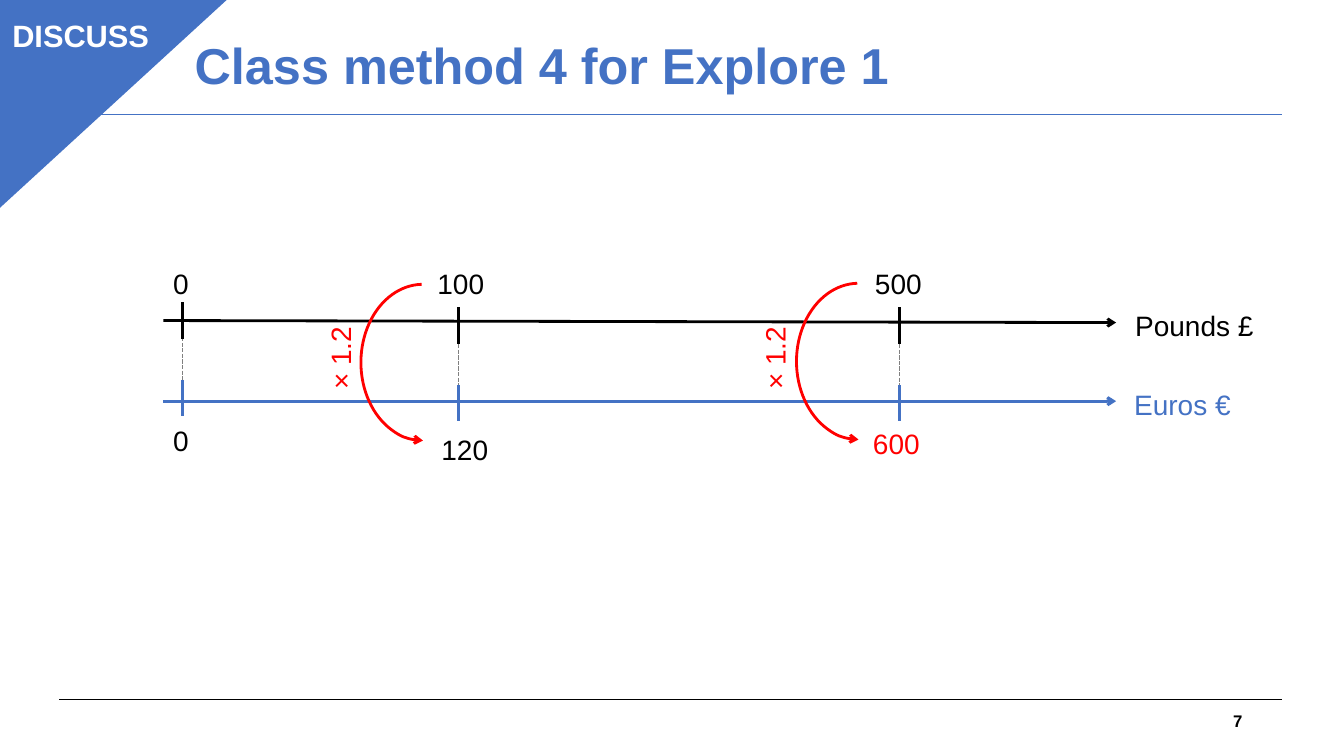
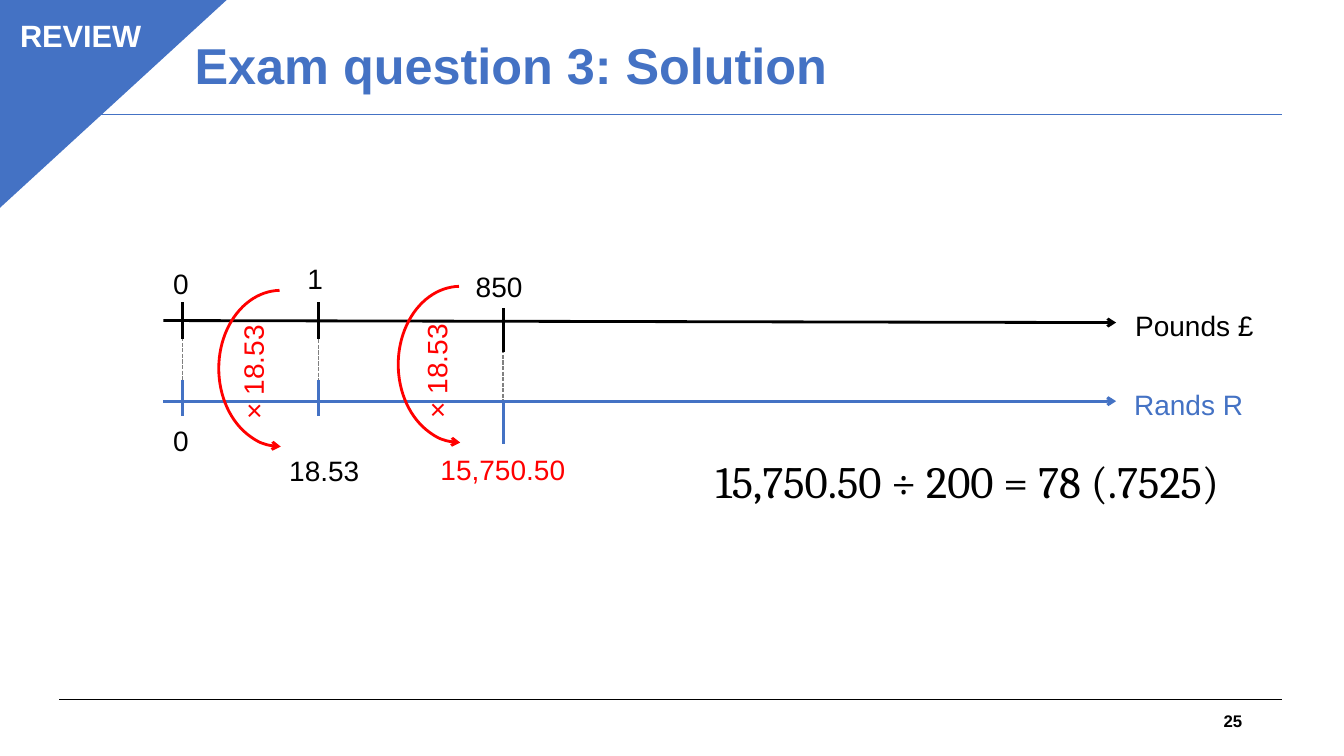
from lxml.etree import SubElement
from pptx import Presentation
from pptx.dml.color import RGBColor
from pptx.enum.dml import MSO_LINE
from pptx.enum.shapes import MSO_CONNECTOR, MSO_SHAPE
from pptx.enum.text import MSO_ANCHOR, MSO_AUTO_SIZE, PP_ALIGN
from pptx.oxml.ns import qn
from pptx.util import Pt

PX = 9144  # EMU; 100 px to the inch
BLUE = RGBColor(0x44, 0x72, 0xC4)
BLACK = RGBColor(0, 0, 0)
GREY = RGBColor(0x80, 0x80, 0x80)
RED = RGBColor(0xFF, 0, 0)
WHITE = RGBColor(0xFF, 0xFF, 0xFF)

TITLE_LAYOUT = 5
LABEL_HEIGHT = 44
ARC_WIDTH, ARC_HEIGHT = 155, 123

# Marks: x, upper tick top, tick length, dash top, dash bottom, lower tick top
ZERO_MARK = (181, 300, 36, 318, 395, 377)
# Labels: text, left, top, width, colour
SHARED_LABELS = [
    ("0", 162, 259, 40, BLACK),
    ("0", 162, 415, 40, BLACK),
    ("Pounds £", 1116, 301, 145, BLACK),
]
# Multipliers: arc left, arc top, text, text left, text top, text width
SLIDES = [
    {
        "tag": "DISCUSS",
        "title": "Class method 4 for Explore 1",
        "number": "7",
        "marks": [(455, 305, 36, 325, 403, 382), (892, 305, 36, 325, 403, 382)],
        "labels": [
            ("Euros €", 1115, 380, 140, BLUE),
            ("100", 424, 259, 73, BLACK),
            ("120", 428, 424, 73, BLACK),
            ("500", 858, 259, 73, BLACK),
            ("600", 856, 418, 73, RED),
        ],
        "multipliers": [
            (342, 298, "× 1.2", 289, 326, 97),
            (774, 297, "× 1.2", 720, 326, 97),
        ],
        "working": None,
    },
    {
        "tag": "REVIEW",
        "title": "Exam question 3: Solution",
        "number": "25",
        "marks": [(316, 300, 36, 320, 398, 377), (499, 306, 43, 330, 421, 397)],
        "labels": [
            ("Rands R", 1115, 380, 140, BLUE),
            ("1", 295, 255, 40, BLACK),
            ("18.53", 277, 445, 95, BLACK),
            ("850", 462, 262, 111, BLACK),
            ("15,750.50", 427, 444, 158, RED),
        ],
        "multipliers": [
            (201, 304, "× 18.53", 191, 344, 120),
            (379, 300, "× 18.53", 373, 343, 120),
        ],
        "working": "15,750.50 ÷ 200 = 78 (.7525)",
    },
]


def add_line(page, ends, color, width=2, dash=None, arrow=False):
    line = page.shapes.add_connector(MSO_CONNECTOR.STRAIGHT, *(n * PX for n in ends))
    line.line.color.rgb = color
    line.line.width = Pt(width)
    properties = line.element.spPr
    if dash:
        line.line.dash_style = dash
    if arrow:
        SubElement(properties.find(qn("a:ln")), qn("a:tailEnd"), type="arrow")
    SubElement(properties, qn("a:effectLst"))


def add_text(page, text, area, color, size=20, bold=False, font="Arial", align=PP_ALIGN.LEFT):
    box = page.shapes.add_textbox(*(n * PX for n in area))
    box.text_frame.word_wrap = True
    para = box.text_frame.paragraphs[0]
    para.alignment = align
    span = para.add_run()
    span.text = text
    span.font.name = font
    span.font.size = Pt(size)
    span.font.bold = bold
    span.font.color.rgb = color
    return box


deck = Presentation()
deck.slide_width, deck.slide_height = 1333 * PX, 750 * PX

for content in SLIDES:
    page = deck.slides.add_slide(deck.slide_layouts[TITLE_LAYOUT])

    # Frame: rules, title, page number and corner tag
    add_line(page, (59, 694, 1272, 694), BLACK, 0.75)
    add_line(page, (59, 114, 1272, 114), BLUE, 0.75)

    title = page.shapes.title
    title.left, title.top, title.width, title.height = (n * PX for n in (183, 12, 869, 111))
    title.text_frame.auto_size = MSO_AUTO_SIZE.NONE
    title.text_frame.vertical_anchor = MSO_ANCHOR.MIDDLE
    para = title.text_frame.paragraphs[0]
    para.alignment = PP_ALIGN.LEFT
    para.line_spacing = 0.9
    span = para.add_run()
    span.text = content["title"]
    span.font.name = "Arial"
    span.font.size = Pt(36)
    span.font.bold = True
    span.font.color.rgb = BLUE

    number = add_text(page, content["number"], (942, 695, 300, 40), BLACK, 12, True,
                      align=PP_ALIGN.RIGHT)
    number.text_frame.vertical_anchor = MSO_ANCHOR.MIDDLE

    corner = page.shapes.add_shape(MSO_SHAPE.ISOSCELES_TRIANGLE,
                                   *(n * PX for n in (-3, -2, 229, 210)))
    corner.adjustments[0] = 0
    corner.element.spPr.xfrm.set("flipV", "1")
    corner.shadow.inherit = False
    corner.fill.solid()
    corner.fill.fore_color.rgb = BLUE
    corner.line.color.rgb = BLUE
    corner.line.width = Pt(1)

    tag = add_text(page, content["tag"], (1, 12, 158, 47), WHITE, 22, True,
                   align=PP_ALIGN.CENTER)
    tag.text_frame.word_wrap = False
    tag.fill.solid()
    tag.fill.fore_color.rgb = BLUE
    tag.line.color.rgb = BLUE
    tag.line.width = Pt(0.75)

    # Double number line
    add_line(page, (162, 318, 1107, 320), BLACK, arrow=True)
    add_line(page, (162, 398, 1107, 398), BLUE, arrow=True)
    for x, upper, tick, dash_top, dash_bottom, lower in [ZERO_MARK] + content["marks"]:
        add_line(page, (x, dash_top, x, dash_bottom), GREY, 1, MSO_LINE.SQUARE_DOT)
        add_line(page, (x, upper, x, upper + tick), BLACK)
        add_line(page, (x, lower, x, lower + tick), BLUE)
    for text, left, top, width, color in SHARED_LABELS + content["labels"]:
        add_text(page, text, (left, top, width, LABEL_HEIGHT), color)

    # Multiplier arrows
    for arc_left, arc_top, text, left, top, width in content["multipliers"]:
        arc = page.shapes.add_shape(MSO_SHAPE.ARC, arc_left * PX, arc_top * PX,
                                    ARC_WIDTH * PX, ARC_HEIGHT * PX)
        arc.adjustments[0] = 108.54
        arc.adjustments[1] = 0
        arc.rotation = 90
        arc.element.spPr.xfrm.set("flipV", "1")
        arc.shadow.inherit = False
        arc.fill.background()
        arc.line.color.rgb = RED
        arc.line.width = Pt(2)
        SubElement(arc.element.spPr.find(qn("a:ln")), qn("a:tailEnd"), type="arrow")
        factor = add_text(page, text, (left, top, width, LABEL_HEIGHT), RED)
        factor.rotation = 270

    if content["working"]:
        add_text(page, content["working"], (700, 445, 633, 64), BLACK, 32, font="Cambria")

deck.save("out.pptx")
